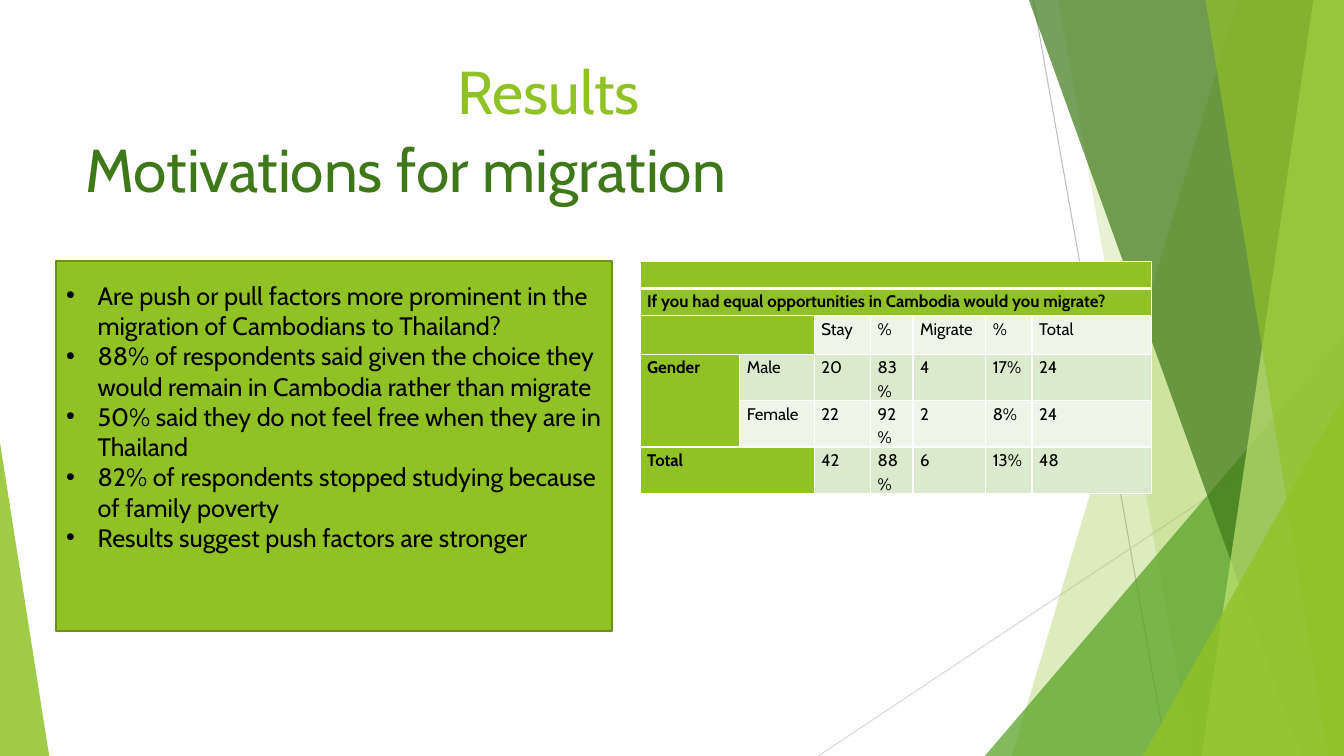
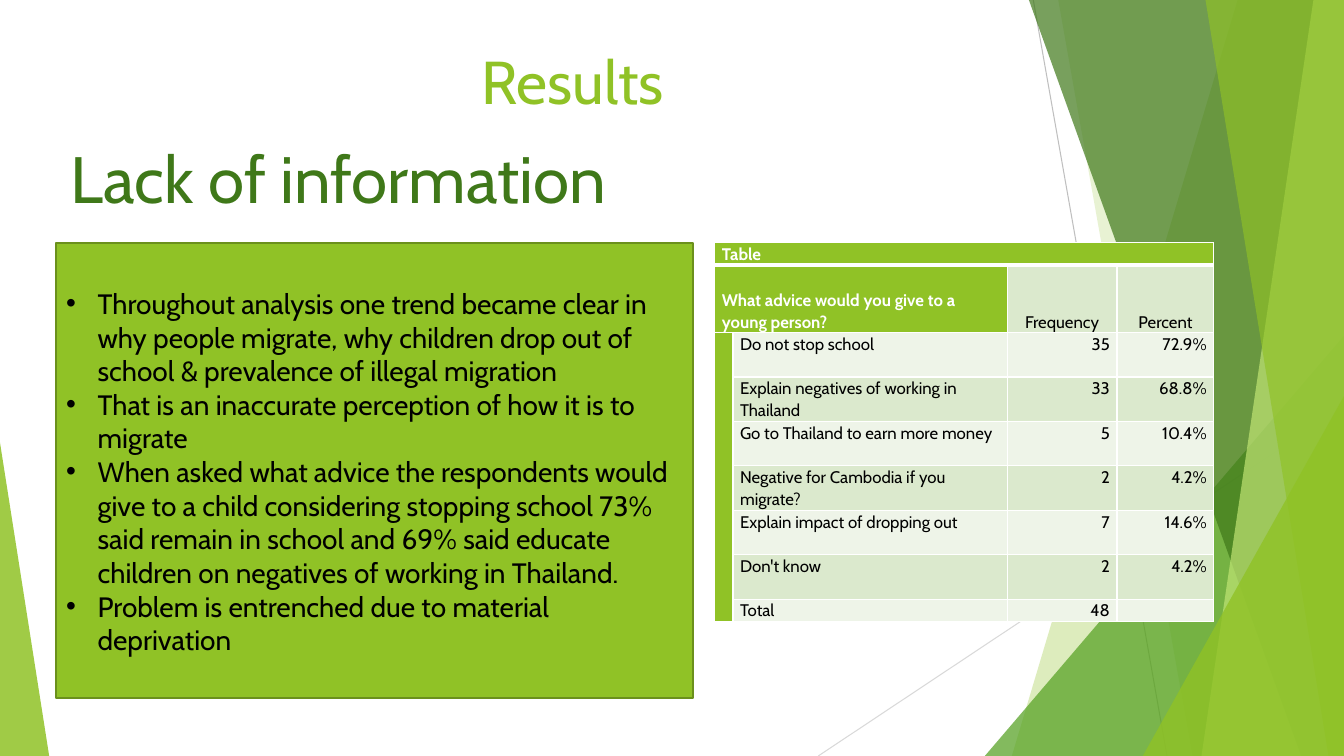
from dataclasses import dataclass

from lxml import etree
from pptx import Presentation
from pptx import util as u
from pptx.dml.color import RGBColor
from pptx.enum import shapes, text
from pptx.oxml.ns import qn

Cm = u.Cm
ALIGN = text.PP_ALIGN
ANCHOR = text.MSO_ANCHOR


@dataclass(frozen=True)
class Theme:
    font: str = "Cabin"
    bullet_font: str = "Arial"
    lime: str = "90C226"
    lime_edge: str = "6B901C"
    pale_lime: str = "C0E474"
    leaf: str = "54A021"
    forest: str = "3F7819"
    row_light: str = "EEF4E8"
    row_dark: str = "DBE9CD"
    black: str = "000000"
    white: str = "FFFFFF"
    ray: str = "BFBFBF"
    pale_ray: str = "D9D9D9"
    title_size: float = 43.2
    table_size: float = 12


T = Theme()
WIDTH, HEIGHT = 33.87, 19.05


@dataclass(frozen=True)
class Ray:
    x1: float
    y1: float
    x2: float
    y2: float
    color: str


@dataclass(frozen=True)
class Band:
    """A full-height facet between a slanted left edge and the right slide edge."""
    top_x: float
    bottom_x: float
    color: str
    opacity: int


@dataclass(frozen=True)
class Corner:
    """A right triangle on the bottom edge; apex 0 is at its left, 1 at its right."""
    left: float
    top: float
    width: float
    apex: float
    color: str
    opacity: int


@dataclass(frozen=True)
class Heading:
    text: str
    left: float
    top: float
    width: float
    color: str
    size: float = T.title_size


@dataclass(frozen=True)
class BulletBox:
    top: float
    width: float
    height: float
    top_inset: float
    size: float
    lines: tuple[str, ...]
    left: float = 1.42


@dataclass(frozen=True)
class TableSpec:
    """Merged cells (first row, first column, last row, last column) are the green headers."""
    left: float
    top: float
    cols: tuple[float, ...]
    rows: tuple[float, ...]
    cells: tuple[tuple[str, ...], ...]
    merges: tuple[tuple[int, int, int, int], ...]
    header_color: str
    spacing: float
    head_align: ALIGN = ALIGN.LEFT
    number_align: ALIGN = ALIGN.LEFT
    head_anchors: tuple[ANCHOR, ANCHOR] = (ANCHOR.TOP, ANCHOR.TOP)


@dataclass(frozen=True)
class SlideSpec:
    headings: tuple[Heading, ...]
    box: BulletBox
    table: TableSpec


RAYS = (
    Ray(26.04, 0, 29.41, HEIGHT, T.ray),
    Ray(WIDTH, 10.24, 20.62, HEIGHT, T.pale_ray),
)
FACETS = (
    Band(31.19, 25.5, T.lime, 30),
    Band(26.67, 30.05, T.lime, 20),
    Corner(24.82, 8.46, 9.05, 1, T.leaf, 72),
    Band(25.93, 32.79, T.forest, 70),
    Band(33.1, 30.28, T.pale_lime, 70),
    Band(30.38, 33.48, T.lime, 65),
    Corner(28.8, 9.98, 5.07, 1, T.lime, 80),
    Corner(0, 11.15, 1.24, 0, T.lime, 85),
)

SLIDES = (
    SlideSpec(
        headings=(
            Heading("Results", 1.88, 1.24, 23.88, T.lime),
            Heading("Motivations for migration", 0.74, 3.2, 18.97, T.forest),
        ),
        box=BulletBox(6.58, 14, 9.32, 0.48, 18, (
            "Are push or pull factors more prominent in the migration of Cambodians to Thailand?",
            "88% of respondents said given the choice they would remain in Cambodia rather than migrate",
            "50% said they do not feel free when they are in Thailand",
            "82% of respondents stopped studying because of family poverty",
            "Results suggest push factors are stronger",
        )),
        table=TableSpec(
            16.13, 6.58,
            cols=(2.51, 1.88, 1.42, 1.07, 1.83, 1.17, 3.02),
            rows=(0.69, 0.69, 0.97, 0.89, 0.89, 0.81),
            cells=(
                ("",) * 7,
                ("If you had equal opportunities in Cambodia would you migrate?",) + ("",) * 6,
                ("", "", "Stay", "%", "Migrate", "%", "Total"),
                ("Gender", "Male", "20", "83%", "4", "17%", "24"),
                ("", "Female", "22", "92%", "2", "8%", "24"),
                ("Total", "", "42", "88%", "6", "13%", "48"),
            ),
            merges=((0, 0, 0, 6), (1, 0, 1, 6), (2, 0, 2, 1), (3, 0, 4, 0), (5, 0, 5, 1)),
            header_color=T.black,
            spacing=1.15,
        ),
    ),
    SlideSpec(
        headings=(
            Heading("Results", 2.49, 0.99, 23.88, T.lime),
            Heading("Lack of information", 0, 3.35, 17.04, T.forest, 46.8),
        ),
        box=BulletBox(6.12, 16.05, 11.48, 1.1, 20, (
            "Throughout analysis one trend became clear in why people migrate, "
            "why children drop out of school & prevalence of illegal migration",
            "That is an inaccurate perception of how it is to migrate",
            "When asked what advice the respondents would give to a child considering "
            "stopping school 73% said remain in school and 69% said educate children "
            "on negatives of working in Thailand.",
            "Problem is entrenched due to material deprivation",
        )),
        table=TableSpec(
            18.01, 6.12,
            cols=(0.46, 6.91, 2.77, 2.44),
            rows=(0.56, 1.7) + (1.12,) * 6 + (0.56,),
            cells=(
                ("Table", "", "", ""),
                ("What advice would you give to a young person?", "", "Frequency", "Percent"),
                ("", "Do not stop school", "35", "72.9%"),
                ("", "Explain negatives of working in Thailand", "33", "68.8%"),
                ("", "Go to Thailand to earn more money", "5", "10.4%"),
                ("", "Negative for Cambodia if you migrate?", "2", "4.2%"),
                ("", "Explain impact of dropping out", "7", "14.6%"),
                ("", "Don't know", "2", "4.2%"),
                ("", "Total", "48", ""),
            ),
            merges=((0, 0, 0, 3), (1, 0, 1, 1), (2, 0, 8, 0)),
            header_color=T.white,
            spacing=1.07,
            head_align=ALIGN.CENTER,
            number_align=ALIGN.RIGHT,
            head_anchors=(ANCHOR.MIDDLE, ANCHOR.BOTTOM),
        ),
    ),
)


def rgb(color: str) -> RGBColor:
    return RGBColor.from_string(color)


def write(tf, *lines: str, size: float, color: str = T.black, bold: bool = False,
          align: ALIGN = ALIGN.LEFT, spacing: float = 1.0, bullet: str = "") -> None:
    """Put each line in its own paragraph; an empty line only keeps its type size."""
    for i, line in enumerate(lines):
        p = tf.add_paragraph() if i else tf.paragraphs[0]
        p.alignment, p.line_spacing = align, spacing
        if bullet:
            pPr = p._p.get_or_add_pPr()
            pPr.set("marL", str(Cm(0.79)))
            pPr.set("indent", str(-Cm(0.79)))
            etree.SubElement(pPr, qn("a:buFont"), typeface=T.bullet_font)
            etree.SubElement(pPr, qn("a:buChar"), char=bullet)
        if not line:
            etree.SubElement(p._p, qn("a:endParaRPr"), sz=str(round(size * 100)))
            continue
        r = p.add_run()
        r.text = line
        r.font.name, r.font.size, r.font.bold = T.font, u.Pt(size), bold
        r.font.color.rgb = rgb(color)


def paint(sp, color: str, opacity: int = 100) -> None:
    """Fill a shape and leave it without outline or shadow."""
    sp.shadow.inherit = False
    sp.fill.solid()
    sp.fill.fore_color.rgb = rgb(color)
    if opacity < 100:
        srgb = sp.element.find(".//" + qn("a:srgbClr"))
        etree.SubElement(srgb, qn("a:alpha"), val=str(opacity * 1000))
    sp.line.fill.background()


def draw_ray(slide, ray: Ray) -> None:
    line = slide.shapes.add_connector(
        shapes.MSO_CONNECTOR.STRAIGHT, Cm(ray.x1), Cm(ray.y1), Cm(ray.x2), Cm(ray.y2))
    line.line.color.rgb = rgb(ray.color)
    line.line.width = u.Pt(0.75)
    etree.SubElement(line.element.spPr, qn("a:effectLst"))


def draw_facet(slide, facet: Band | Corner) -> None:
    if isinstance(facet, Band):
        fb = slide.shapes.build_freeform(Cm(facet.top_x), 0)
        corners = ((WIDTH, 0), (WIDTH, HEIGHT), (facet.bottom_x, HEIGHT))
        fb.add_line_segments([(Cm(x), Cm(y)) for x, y in corners], close=True)
        sp = fb.convert_to_shape()
    else:
        sp = slide.shapes.add_shape(
            shapes.MSO_SHAPE.ISOSCELES_TRIANGLE, Cm(facet.left), Cm(facet.top),
            Cm(facet.width), Cm(HEIGHT - facet.top))
        sp.adjustments[0] = facet.apex
    paint(sp, facet.color, facet.opacity)


def draw_heading(slide, h: Heading) -> None:
    sp = slide.shapes.add_textbox(Cm(h.left), Cm(h.top), Cm(h.width), Cm(2.97))
    sp.text_frame.word_wrap = True
    write(sp.text_frame, h.text, size=h.size, color=h.color, align=ALIGN.CENTER)


def draw_bullet_box(slide, box: BulletBox) -> None:
    sp = slide.shapes.add_shape(shapes.MSO_SHAPE.RECTANGLE, Cm(box.left), Cm(box.top),
                                Cm(box.width), Cm(box.height))
    paint(sp, T.lime)
    sp.line.color.rgb = rgb(T.lime_edge)
    sp.line.width = u.Pt(1.5)
    tf = sp.text_frame
    tf.word_wrap, tf.vertical_anchor, tf.margin_top = True, ANCHOR.TOP, Cm(box.top_inset)
    write(tf, *box.lines, size=box.size, bullet="•")


def set_borders(cell, top: float, bottom: float) -> None:
    """Give a cell white borders, 1 pt at its sides."""
    tcPr = cell._tc.get_or_add_tcPr()
    for i, (side, width) in enumerate(zip("LRTB", (1, 1, top, bottom))):
        ln = etree.Element(qn(f"a:ln{side}"), w=str(u.Pt(width)))
        fill = etree.SubElement(ln, qn("a:solidFill"))
        etree.SubElement(fill, qn("a:srgbClr"), val=T.white)
        tcPr.insert(i, ln)


def draw_table(slide, spec: TableSpec) -> None:
    frame = slide.shapes.add_table(len(spec.rows), len(spec.cols), Cm(spec.left), Cm(spec.top),
                                   Cm(sum(spec.cols)), Cm(sum(spec.rows)))
    table = frame.table
    table.first_row = table.horz_banding = False
    for col, width in zip(table.columns, spec.cols):
        col.width = Cm(width)
    for row, height in zip(table.rows, spec.rows):
        row.height = Cm(height)
    for r1, c1, r2, c2 in spec.merges:
        table.cell(r1, c1).merge(table.cell(r2, c2))

    for r, values in enumerate(spec.cells):
        for c, value in enumerate(values):
            cell = table.cell(r, c)
            header = cell.is_merge_origin or cell.is_spanned
            band = T.row_dark if r % 2 else T.row_light
            cell.fill.solid()
            cell.fill.fore_color.rgb = rgb(T.lime if header else band)
            cell.margin_left = cell.margin_right = Cm(0.18)
            cell.margin_top = cell.margin_bottom = 0
            cell.vertical_anchor = spec.head_anchors[r] if r < 2 else ANCHOR.TOP
            set_borders(cell, top=3 if r == 1 else 1, bottom=3 if r == 0 else 1)
            align = ALIGN.LEFT
            if c >= 2 and not header:
                align = spec.head_align if r == 1 else spec.number_align
            write(cell.text_frame, value, size=T.table_size, bold=header, align=align,
                  color=spec.header_color if header else T.black, spacing=spec.spacing)


def main() -> None:
    prs = Presentation()
    prs.slide_width, prs.slide_height = Cm(WIDTH), Cm(HEIGHT)
    for spec in SLIDES:
        slide = prs.slides.add_slide(prs.slide_layouts[6])
        for ray in RAYS:
            draw_ray(slide, ray)
        for facet in FACETS:
            draw_facet(slide, facet)
        for heading in spec.headings:
            draw_heading(slide, heading)
        draw_bullet_box(slide, spec.box)
        draw_table(slide, spec.table)
    prs.save("out.pptx")


if __name__ == "__main__":
    main()
